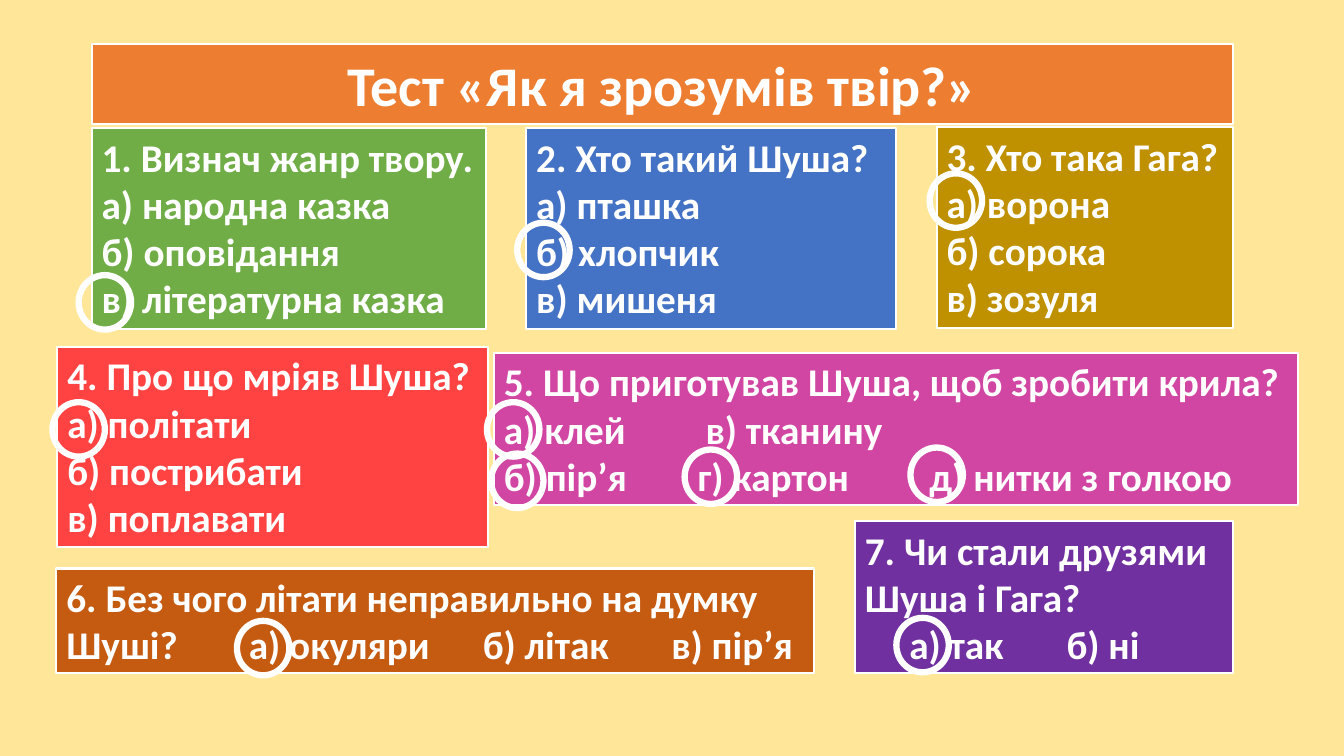
from lxml import etree
from pptx import Presentation
from pptx.dml.color import RGBColor
from pptx.enum.shapes import MSO_SHAPE
from pptx.enum.text import MSO_ANCHOR, MSO_AUTO_SIZE, PP_ALIGN
from pptx.oxml.ns import qn
from pptx.util import Inches, Pt

RECT, OVAL = MSO_SHAPE.RECTANGLE, MSO_SHAPE.OVAL
TOP, MIDDLE = MSO_ANCHOR.TOP, MSO_ANCHOR.MIDDLE
LEFT, CENTER = PP_ALIGN.LEFT, PP_ALIGN.CENTER
NO_AUTOFIT = MSO_AUTO_SIZE.NONE

FONT = "Calibri"
WHITE, BACKGROUND, TITLE_FILL = "FFFFFF", "FFE699", "ED7D31"
RING_SIZE = (0.52, 0.54)

TITLE = "Тест «Як я зрозумів твір?»"
TITLE_BOX = (0.91, 0.44, 11.32, 0.79)

# Questions: box, fill, lines of (text, tab stops in inches)
QUESTIONS = [
    ((0.91, 1.27, 3.91, 1.99), "70AD47", [
        ("1. Визнач жанр твору.", ()), ("а) народна казка", ()),
        ("б) оповідання", ()), ("в) літературна казка", ())]),
    ((5.22, 1.27, 3.67, 1.99), "4472C4", [
        ("2. Хто такий Шуша?", ()), ("а) пташка", ()),
        ("б) хлопчик", ()), ("в) мишеня", ())]),
    ((9.29, 1.26, 2.94, 1.99), "BF9000", [
        ("3. Хто така Гага?", ()), ("а) ворона", ()),
        ("б) сорока", ()), ("в) зозуля", ())]),
    ((0.57, 3.44, 4.27, 1.99), "FF4343", [
        ("4. Про що мріяв Шуша?", ()), ("а) політати", ()),
        ("б) пострибати", ()), ("в) поплавати", ())]),
    ((4.9, 3.5, 7.97, 1.51), "D246A3", [
        ("5. Що приготував Шуша, щоб зробити крила?", ()),
        ("а) клей\tв) тканину", (2.0,)),
        ("б) пір’я\tг) картон\tд) нитки з голкою", (1.92, 4.22))]),
    ((0.56, 5.64, 7.51, 1.04), "C55A11", [
        ("6. Без чого літати неправильно на думку Шуші?"
         "\tа) окуляри\tб) літак\tв) пір’я", (1.81, 4.13, 6.0))]),
    ((8.48, 5.17, 3.75, 1.51), "7030A0", [
        ("7. Чи стали друзями Шуша і Гага?", ()),
        ("\tа) так\tб) ні", (0.44, 2.0))]),
]

# Top left corners of the rings around the right answers
ANSWER_RINGS = [
    (0.78, 2.73), (5.13, 2.21), (9.22, 1.72), (0.52, 3.99), (4.83, 3.99),
    (4.87, 4.5), (6.79, 4.46), (9.03, 4.44), (2.35, 6.16), (8.89, 6.13),
]


def color(hex_code):
    return RGBColor.from_string(hex_code)


def paint(shape, fill, line_width):
    if fill:
        shape.fill.solid()
        shape.fill.fore_color.rgb = color(fill)
    else:
        shape.fill.background()
    shape.line.color.rgb = color(WHITE)
    shape.line.width = Pt(line_width)
    shape.shadow.inherit = False


def write(shape, lines, size, align, anchor):
    frame = shape.text_frame
    frame.word_wrap = True
    frame.auto_size = NO_AUTOFIT
    frame.vertical_anchor = anchor
    for index, (text, stops) in enumerate(lines):
        paragraph = frame.add_paragraph() if index else frame.paragraphs[0]
        paragraph.alignment = align
        paragraph.line_spacing = 1.0
        if stops:
            tabs = etree.SubElement(paragraph._p.get_or_add_pPr(), qn("a:tabLst"))
            for stop in stops:
                etree.SubElement(tabs, qn("a:tab"), pos=str(Inches(stop)), algn="l")
        run = paragraph.add_run()
        run.text = text
        run.font.name = FONT
        run.font.size = Pt(size)
        run.font.bold = True
        run.font.color.rgb = color(WHITE)


def main():
    deck = Presentation()
    deck.slide_width, deck.slide_height = Inches(13.33), Inches(7.5)
    slide = deck.slides.add_slide(deck.slide_layouts[5])
    slide.background.fill.solid()
    slide.background.fill.fore_color.rgb = color(BACKGROUND)

    # Title bar
    title = slide.shapes.title
    title.left, title.top, title.width, title.height = map(Inches, TITLE_BOX)
    paint(title, TITLE_FILL, 1.5)
    write(title, [(TITLE, ())], 40, CENTER, MIDDLE)

    # Question cards
    for box, fill, lines in QUESTIONS:
        card = slide.shapes.add_shape(RECT, *map(Inches, box))
        paint(card, fill, 1.5)
        write(card, lines, 28, LEFT, TOP)

    # Answer rings
    for corner in ANSWER_RINGS:
        ring = slide.shapes.add_shape(OVAL, *map(Inches, corner + RING_SIZE))
        paint(ring, None, 4.5)

    deck.save("out.pptx")


if __name__ == "__main__":
    main()
